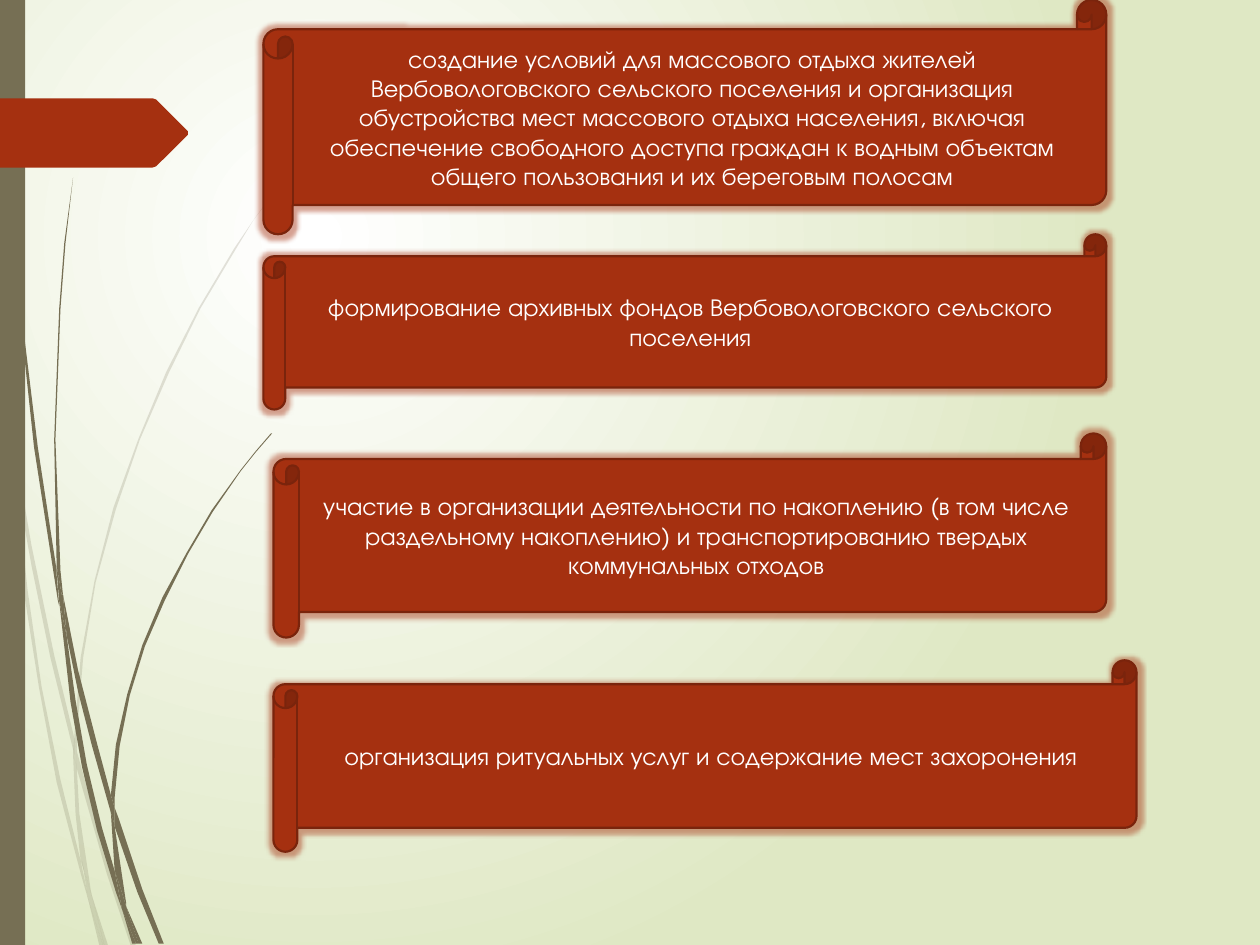
from pptx import Presentation
from pptx.dml.color import RGBColor
from pptx.enum.shapes import MSO_SHAPE
from pptx.enum.text import MSO_ANCHOR, PP_ALIGN
from pptx.oxml.ns import qn
from pptx.util import Pt
from lxml import etree

PX = 9144
WIDTH, HEIGHT = 1000, 750
BLANK_LAYOUT = 6
FONT = "TeX Gyre Adventor"
RECTANGLE, SCROLL = MSO_SHAPE.RECTANGLE, MSO_SHAPE.HORIZONTAL_SCROLL
MIDDLE, CENTER = MSO_ANCHOR.MIDDLE, PP_ALIGN.CENTER

WHITE = RGBColor(0xFF, 0xFF, 0xFF)
PALE_GREEN = RGBColor(0xDF, 0xE8, 0xC4)
OLIVE = RGBColor(0x76, 0x6F, 0x54)
RUST = RGBColor(0xA5, 0x30, 0x10)
DARK_RUST = RGBColor(0x7A, 0x24, 0x0C)

FAINT_GRASS = (
    ((8, 350), (6, 322), (0, 282), (0, 299), (7, 344)),
    ((40, 522), (59, 599), (59, 586), (43, 520), (25, 433), (10, 345), (12, 376), (25, 449)),
    ((64, 607), (61, 596), (61, 610), (85, 694), (104, 751), (108, 751), (88, 692), (76, 650)),
    ((83, 751), (86, 751), (73, 711)),
    ((64, 683), (48, 619), (33, 545), (22, 469), (12, 376), (8, 350), (12, 410), (19, 470),
     (31, 546), (45, 621), (64, 693), (70, 714), (69, 707)),
    ((58, 599), (60, 646), (64, 683), (67, 692), (73, 711), (72, 706), (63, 646), (61, 610),
     (61, 608)),
    ((61, 584), (66, 522), (76, 462), (92, 404), (111, 349), (134, 296), (159, 245), (187, 198),
     (201, 175), (217, 154), (217, 153), (201, 175), (186, 197), (158, 244), (132, 295),
     (110, 348), (90, 403), (75, 461), (64, 522), (59, 584), (59, 586), (61, 596)),
    ((70, 714), (79, 751), (82, 751)),
    ((61, 608), (61, 610), (61, 596), (59, 586), (58, 599)),
    ((67, 692), (65, 683), (69, 707), (70, 714), (82, 751), (83, 751), (73, 711)),
)
DARK_GRASS = (
    ((5, 110), (14, 233), (27, 355), (46, 477), (47, 481), (45, 457), (45, 453), (30, 355),
     (15, 232), (6, 109), (4, 48), (3, 0), (2, 0), (3, 48)),
    ((73, 592), (88, 645), (88, 633), (88, 631), (77, 590), (62, 532), (50, 472), (53, 505),
     (62, 549)),
    ((94, 649), (91, 641), (91, 656), (109, 708), (126, 749), (130, 749), (113, 706)),
    ((91, 691), (81, 657), (69, 607), (60, 556), (53, 505), (47, 477), (56, 557), (65, 608),
     (77, 659), (92, 708), (97, 722), (96, 717)),
    ((50, 472), (48, 453), (44, 349), (48, 245), (52, 193), (58, 141), (51, 193), (47, 245),
     (43, 349), (45, 449), (49, 472)),
    ((110, 749), (113, 749), (100, 719)),
    ((47, 477), (53, 505), (50, 472), (49, 472), (45, 449), (45, 453)),
    ((91, 633), (95, 592), (103, 552), (115, 513), (131, 476), (149, 440), (169, 406),
     (191, 374), (203, 359), (216, 344), (215, 344), (203, 358), (191, 373), (168, 405),
     (148, 439), (129, 474), (113, 512), (101, 551), (92, 591), (88, 631), (91, 641)),
    ((97, 722), (105, 749), (108, 749)),
    ((88, 645), (91, 691), (96, 706), (100, 719), (100, 716), (91, 656), (90, 651)),
    ((88, 645), (90, 651), (91, 656), (91, 641), (88, 631), (88, 633)),
    ((96, 706), (91, 691), (96, 717), (97, 722), (108, 749), (110, 749), (100, 719)),
)
TAG = ((149, 107), (124, 132), (121, 133), (0, 133), (0, 78), (121, 78), (124, 79), (149, 104))

SCROLLS = (
    ((209, 0, 669, 186),
     "создание условий для массового отдыха жителей Вербовологовского сельского поселения "
     "и организация обустройства мест массового отдыха населения, включая обеспечение "
     "свободного доступа граждан к водным объектам общего пользования и их береговым полосам"),
    ((217, 344, 661, 162),
     "участие в организации деятельности по накоплению (в том числе раздельному накоплению) "
     "и транспортированию твердых коммунальных отходов"),
    ((209, 186, 669, 139),
     "формирование архивных фондов Вербовологовского сельского поселения"),
    ((217, 524, 685, 152),
     "организация ритуальных услуг и содержание мест захоронения"),
)


def paint_background(page):
    """Fill the page with a radial gradient centred in its upper left quarter."""
    fill = page.background.fill
    fill.gradient()
    for stop, color in zip(fill.gradient_stops, (WHITE, PALE_GREEN)):
        stop.color.rgb = color
    gradient = next(page.element.iter(qn("a:gradFill")))
    gradient.remove(gradient.find(qn("a:lin")))
    focus = etree.SubElement(gradient, qn("a:path"), path="circle")
    etree.SubElement(focus, qn("a:fillToRect"), l="50000", t="50000", r="100000", b="100000")


def paint_plain(shape, color):
    """Give a shape a solid fill with no line or shadow."""
    shape.shadow.inherit = False
    shape.fill.solid()
    shape.fill.fore_color.rgb = color
    shape.line.fill.background()


def add_outline(shapes, points, color):
    """Add a closed outline through the points."""
    builder = shapes.build_freeform(*points[0], scale=PX)
    builder.add_line_segments(points[1:], close=True)
    outline = builder.convert_to_shape()
    paint_plain(outline, color)
    return outline


def add_grass(page, blades, opacity):
    """Add a group of grass blades with the given opacity in percent."""
    group = page.shapes.add_group_shape()
    for points in blades:
        blade = add_outline(group.shapes, points, OLIVE)
        if opacity < 100:
            color = next(blade.element.spPr.iter(qn("a:srgbClr")))
            etree.SubElement(color, qn("a:alpha"), val=str(opacity * 1000))


def add_shape(page, kind, bounds):
    """Add a preset shape at bounds given in px."""
    return page.shapes.add_shape(kind, *(length * PX for length in bounds))


def add_glow(shape):
    """Put a soft rust glow around a shape."""
    effects = shape.element.spPr.find(qn("a:effectLst"))
    glow = etree.SubElement(effects, qn("a:glow"), rad=str(Pt(5)))
    color = etree.SubElement(glow, qn("a:srgbClr"), val=str(RUST))
    etree.SubElement(color, qn("a:alpha"), val="45000")


def add_scroll(page, bounds, text):
    """Add a glowing scroll with centred text."""
    scroll = add_shape(page, SCROLL, bounds)
    paint_plain(scroll, RUST)
    scroll.line.color.rgb = DARK_RUST
    scroll.line.width = Pt(1.25)
    add_glow(scroll)
    frame = scroll.text_frame
    frame.word_wrap = True
    frame.vertical_anchor = MIDDLE
    para = frame.paragraphs[0]
    para.text = text
    para.alignment = CENTER
    para.font.name = FONT
    para.font.size = Pt(14)
    para.font.color.rgb = WHITE


def main():
    """Build the slide and save the deck."""
    deck = Presentation()
    deck.slide_width, deck.slide_height = WIDTH * PX, HEIGHT * PX
    page = deck.slides.add_slide(deck.slide_layouts[BLANK_LAYOUT])
    paint_background(page)
    add_grass(page, FAINT_GRASS, 20)
    add_grass(page, DARK_GRASS, 100)
    paint_plain(add_shape(page, RECTANGLE, (0, 0, 20, HEIGHT)), OLIVE)
    add_outline(page.shapes, TAG, RUST)
    for bounds, text in SCROLLS:
        add_scroll(page, bounds, text)
    deck.save("out.pptx")


if __name__ == "__main__":
    main()
